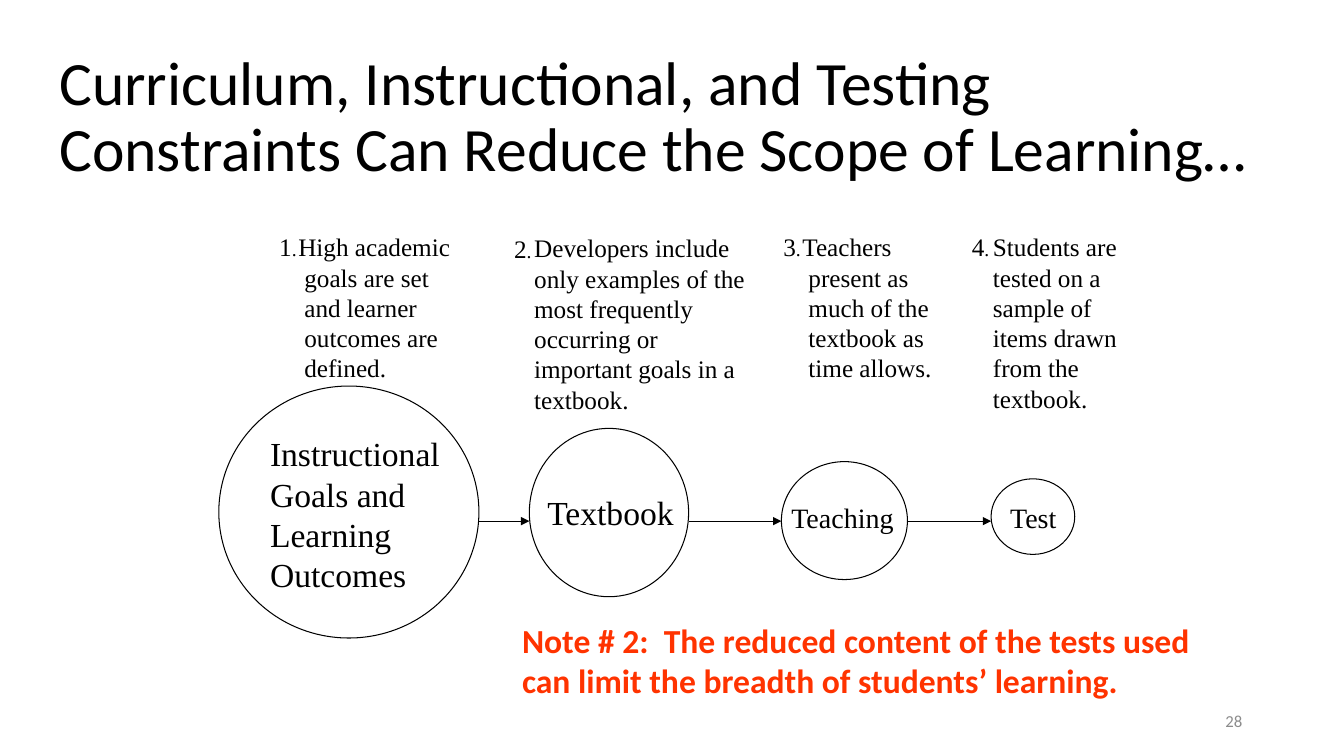
from dataclasses import dataclass

from lxml.etree import SubElement
from pptx import Presentation
from pptx.dml.color import RGBColor
from pptx.enum.shapes import MSO_CONNECTOR as Connector, MSO_SHAPE as Shape
from pptx.enum.text import MSO_ANCHOR as Anchor, PP_ALIGN as Align
from pptx.oxml.ns import qn
from pptx.util import Inches, Pt


@dataclass(frozen=True)
class Theme:
    ink: RGBColor = RGBColor(0x00, 0x00, 0x00)
    accent: RGBColor = RGBColor(0xFF, 0x33, 0x00)
    muted: RGBColor = RGBColor(0x8C, 0x8C, 0x8C)
    sans: str = "Calibri"
    serif: str = "Times New Roman"
    title: int = 44
    large: int = 24
    medium: int = 20
    body: int = 18
    dot: int = 14
    footer: int = 12
    stroke: float = 0.75


class SlideBuilder:
    def __init__(self, slide, theme):
        self.slide = slide
        self.theme = theme

    def text(self, box, parts, font=None, color=None, bold=False,
             anchor=Anchor.TOP, wrap=True):
        frame = self.slide.shapes.add_textbox(*map(Inches, box)).text_frame
        frame.word_wrap = wrap
        frame.vertical_anchor = anchor
        paragraph = frame.paragraphs[0]
        for wording, size in parts:
            run = paragraph.add_run()
            run.text = wording
            run.font.name = font or self.theme.serif
            run.font.size = Pt(size)
            run.font.bold = bold
            run.font.color.rgb = color or self.theme.ink
        return paragraph

    def hanging_text(self, box, wording, first_line):
        paragraph = self.text(box, [(wording, self.theme.body)])
        properties = paragraph._p.get_or_add_pPr()
        properties.set("marL", str(Inches(0.5)))
        properties.set("indent", str(Inches(first_line)))

    def number(self, left, top, digit):
        parts = [(digit, self.theme.body), (".", self.theme.dot)]
        self.text((left, top, 0.38, 0.4), parts, wrap=False)

    def circle(self, box):
        oval = self.slide.shapes.add_shape(Shape.OVAL, *map(Inches, box))
        oval.shadow.inherit = False
        oval.fill.background()
        oval.line.color.rgb = self.theme.ink
        oval.line.width = Pt(self.theme.stroke)

    def arrow(self, start, end, y):
        link = self.slide.shapes.add_connector(
            Connector.STRAIGHT, Inches(start), Inches(y), Inches(end), Inches(y))
        link.line.color.rgb = self.theme.ink
        link.line.width = Pt(self.theme.stroke)
        SubElement(link.line._get_or_add_ln(), qn("a:tailEnd"), type="triangle")
        SubElement(link._element.spPr, qn("a:effectLst"))


def main():
    theme = Theme()
    deck = Presentation()
    deck.slide_width, deck.slide_height = Inches(13.33), Inches(7.5)
    builder = SlideBuilder(deck.slides.add_slide(deck.slide_layouts[6]), theme)

    heading = builder.text(
        (0.49, 0.26, 12.29, 1.83),
        [("Curriculum, Instructional, and Testing Constraints Can Reduce "
          "the Scope of Learning…", theme.title)],
        font=theme.sans, anchor=Anchor.MIDDLE)
    heading.line_spacing = 0.9

    stages = [
        ((2.17, 3.83, 2.58, 2.5), "Instructional Goals and Learning Outcomes",
         (2.58, 4.25, 2.33, 1.72), theme.large),
        ((5.25, 4.25, 1.58, 1.67), "Textbook", (5.33, 4.83, 1.5, 0.5), theme.large),
        ((7.75, 4.58, 1.25, 1.17), "Teaching", (7.75, 4.92, 1.25, 0.43), theme.medium),
        ((9.83, 4.75, 0.83, 0.75), "Test", (9.92, 4.92, 0.92, 0.43), theme.medium),
    ]
    for circle, label, label_box, size in stages:
        builder.circle(circle)
        builder.text(label_box, [(label, size)])

    circles = [stage[0] for stage in stages]
    for source, target in zip(circles, circles[1:]):
        builder.arrow(source[0] + source[2], target[0], 5.17)

    steps = [
        ((2.42, 2.25, 2.25, 1.6), -0.06, 2.67, 2.25,
         "High academic goals are set and learner outcomes are defined."),
        ((4.7, 2.26, 2.84, 1.92), 0, 5, 2.27,
         "Developers include only examples of the most frequently occurring "
         "or important goals in a textbook."),
        ((7.42, 2.25, 2.08, 1.6), -0.06, 7.67, 2.25,
         "Teachers present as much of the textbook as time allows."),
        ((9.25, 2.25, 2.17, 1.9), 0, 9.54, 2.25,
         "Students are tested on a sample of items drawn from the textbook."),
    ]
    for position, step in enumerate(steps, start=1):
        box, first_line, number_left, number_top, wording = step
        builder.hanging_text(box, wording, first_line)
        builder.number(number_left, number_top, str(position))

    builder.text(
        (5.08, 6.1, 7.17, 0.91),
        [("Note # 2:  The reduced content of the tests used can limit "
          "the breadth of students’ learning.", theme.large)],
        font=theme.sans, color=theme.accent, bold=True)

    page_number = builder.text(
        (9.42, 6.95, 3, 0.4), [("28", theme.footer)],
        font=theme.sans, color=theme.muted, anchor=Anchor.MIDDLE)
    page_number.alignment = Align.RIGHT

    deck.save("out.pptx")


if __name__ == "__main__":
    main()
